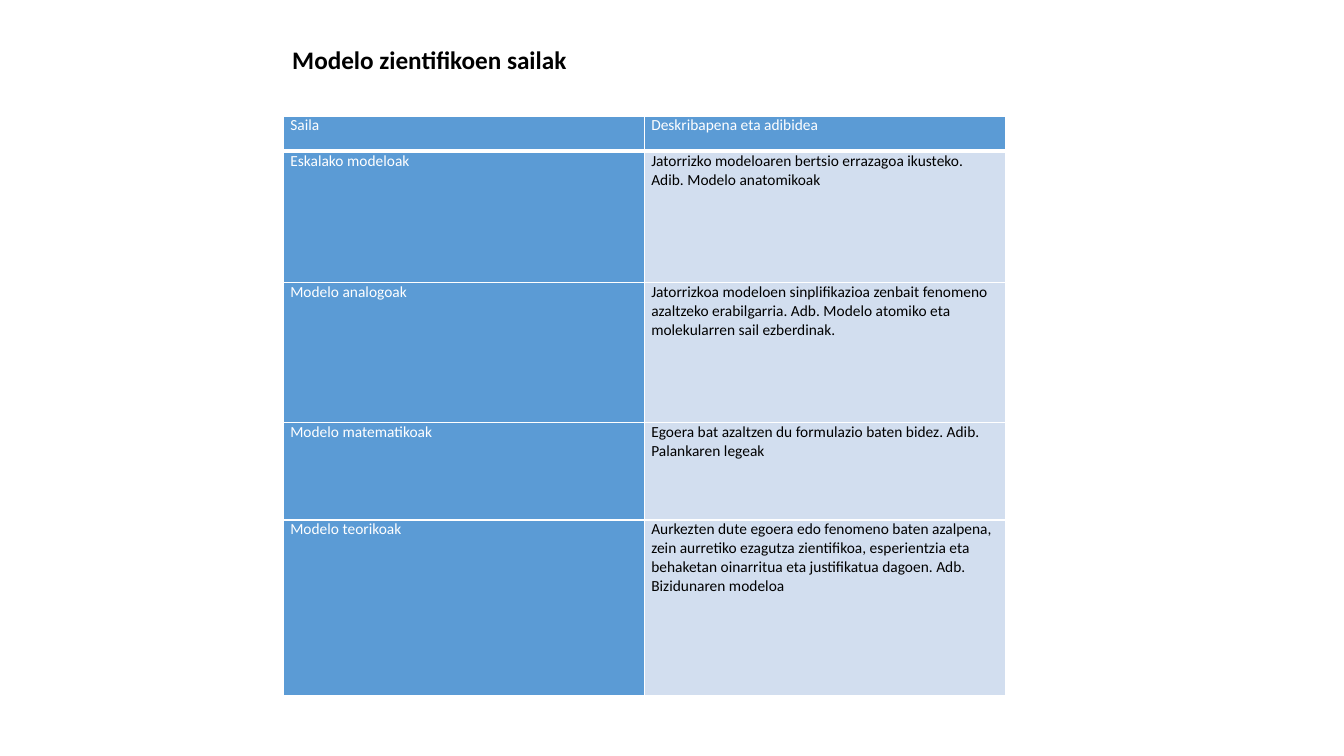
from pptx import Presentation
from pptx.dml.color import RGBColor
from pptx.oxml import parse_xml
from pptx.oxml.ns import nsdecls
from pptx.util import Inches, Pt

WHITE = RGBColor(0xFF, 0xFF, 0xFF)
BLACK = RGBColor(0, 0, 0)
BLUE = RGBColor(0x5B, 0x9B, 0xD5)
PALE = RGBColor(0xD2, 0xDE, 0xEF)

ROWS = [
    (0.35, "Saila", "Deskribapena eta adibidea"),
    (1.3, "Eskalako modeloak",
     "Jatorrizko modeloaren bertsio errazagoa ikusteko. Adib. Modelo anatomikoak"),
    (1.39, "Modelo analogoak",
     "Jatorrizkoa modeloen sinplifikazioa zenbait fenomeno azaltzeko erabilgarria. "
     "Adb. Modelo atomiko eta molekularren sail ezberdinak."),
    (0.97, "Modelo matematikoak",
     "Egoera bat azaltzen du formulazio baten bidez. Adib. Palankaren legeak"),
    (1.74, "Modelo teorikoak",
     "Aurkezten dute egoera edo fenomeno baten azalpena, zein aurretiko ezagutza "
     "zientifikoa, esperientzia eta behaketan oinarritua eta justifikatua dagoen. "
     "Adb. Bizidunaren modeloa"),
]


def style(para, size, color, bold=False):
    font = para.runs[0].font
    font.name = "Calibri"
    font.size = Pt(size)
    font.bold = bold
    font.color.rgb = color


def edge(cell, sides):
    props = cell._tc.get_or_add_tcPr()
    for i, (side, width) in enumerate(sides.items()):
        props.insert(i, parse_xml(
            f'<a:ln{side} {nsdecls("a")} w="{Pt(width)}"><a:solidFill>'
            f'<a:srgbClr val="{WHITE}"/></a:solidFill></a:ln{side}>'))


deck = Presentation()
deck.slide_width = Inches(13.33)
deck.slide_height = Inches(7.5)
slide = deck.slides.add_slide(deck.slide_layouts[6])

# Table of model types
grid = slide.shapes.add_table(len(ROWS), 2, Inches(2.81), Inches(1.15),
                              Inches(7.16), Inches(5.75)).table
for col in grid.columns:
    col.width = Inches(3.58)

for r, (height, *words) in enumerate(ROWS):
    grid.rows[r].height = Inches(height)
    for c, word in enumerate(words):
        cell = grid.cell(r, c)
        body = r > 0 and c == 1
        cell.margin_left = cell.margin_right = Inches(0.07)
        cell.margin_top = cell.margin_bottom = 0
        cell.fill.solid()
        cell.fill.fore_color.rgb = PALE if body else BLUE
        edge(cell, {"L": 1, "R": 1, "T": 1, "B": 1 if r else 3})
        cell.text_frame.text = word
        para = cell.text_frame.paragraphs[0]
        para.space_after = Pt(6)
        style(para, 11, BLACK if body else WHITE)

# Title
title = slide.shapes.add_textbox(Inches(2.8), Inches(0.39), Inches(5.98), Inches(0.71))
title.text_frame.word_wrap = True
title.text_frame.text = "Modelo zientifikoen sailak"
style(title.text_frame.paragraphs[0], 18, BLACK, bold=True)

deck.save("out.pptx")
